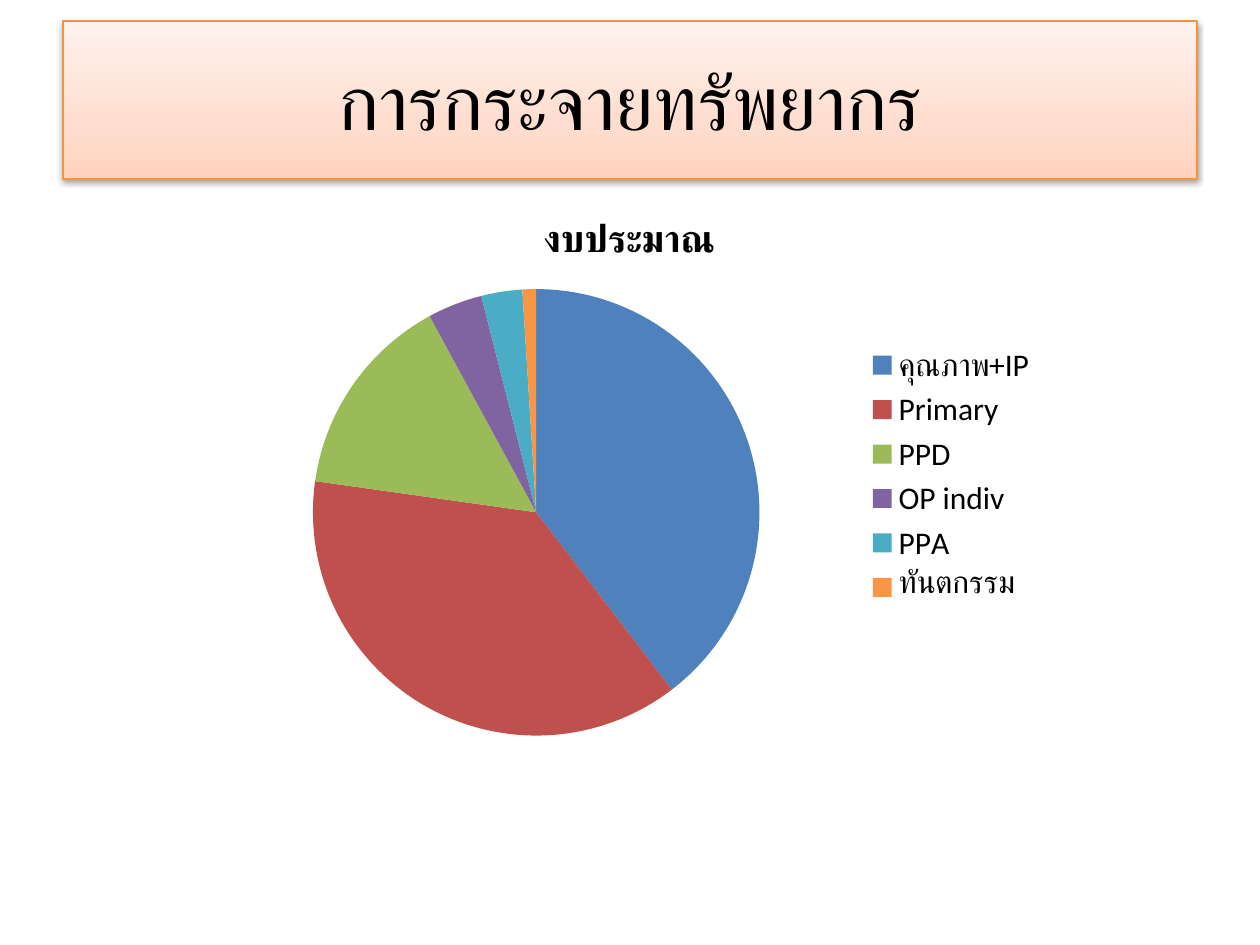
from lxml.etree import SubElement
from pptx import Presentation
from pptx.chart.data import CategoryChartData
from pptx.dml.color import RGBColor
from pptx.enum.chart import XL_CHART_TYPE, XL_LEGEND_POSITION
from pptx.enum.text import MSO_ANCHOR, PP_ALIGN
from pptx.oxml import parse_xml
from pptx.oxml.ns import nsdecls, qn
from pptx.util import Pt

PX = 914400 // 126
FONT = "Calibri"
COLORS = {
    "text": "000000", "line": "F69240", "shadow": "000000",
    "low": "FFD2BD", "mid": "FFDED0", "high": "FFF2ED",
}
STOPS = [(0, "low"), (35, "mid"), (100, "high")]
BUDGET = [
    ("คุณภาพ+IP", 40, "4F81BD"),
    ("Primary", 38, "C0504D"),
    ("PPD", 15, "9BBB59"),
    ("OP indiv", 4, "8064A2"),
    ("PPA", 3, "4BACC6"),
    ("ทันตกรรม", 1, "F79646"),
]


def scale(box):
    return [n * PX for n in box]


def style(font, size, bold=False):
    font.name = FONT
    font.size = Pt(size)
    font.bold = bold
    font.color.rgb = RGBColor.from_string(COLORS["text"])


def add_run(para, text, size, bold=False):
    run = para.add_run()
    run.text = text
    style(run.font, size, bold)


def shade(shape):
    """Give the shape a vertical gradient, a thin line and a soft shadow."""
    shape.fill.background()
    shape.line.color.rgb = RGBColor.from_string(COLORS["line"])
    shape.line.width = Pt(0.75)
    stops = "".join(
        f'<a:gs pos="{pos * 1000}"><a:srgbClr val="{COLORS[key]}"/></a:gs>'
        for pos, key in STOPS)
    props = shape.element.spPr
    props.replace(props.find(qn("a:noFill")), parse_xml(
        f'<a:gradFill {nsdecls("a")} rotWithShape="1"><a:gsLst>{stops}</a:gsLst>'
        '<a:lin ang="16200000" scaled="1"/></a:gradFill>'))
    shape.shadow.inherit = False
    cast = SubElement(props.find(qn("a:effectLst")), qn("a:outerShdw"),
                      blurRad=str(Pt(3.1)), dist=str(Pt(1.6)),
                      dir="5400000", rotWithShape="0")
    tint = SubElement(cast, qn("a:srgbClr"), val=COLORS["shadow"])
    SubElement(tint, qn("a:alpha"), val="38000")


def set_title(slide, box, text):
    title = slide.shapes.title
    title.left, title.top, title.width, title.height = scale(box)
    shade(title)
    frame = title.text_frame
    frame.word_wrap = True
    frame.vertical_anchor = MSO_ANCHOR.MIDDLE
    para = frame.paragraphs[0]
    para.alignment = PP_ALIGN.CENTER
    add_run(para, text, 44)


def add_pie(slide, box, name, rows):
    data = CategoryChartData()
    data.categories = [row[0] for row in rows]
    data.add_series(name, [row[1] for row in rows])
    chart = slide.shapes.add_chart(XL_CHART_TYPE.PIE, *scale(box), data).chart
    style(chart.font, 18)
    add_run(chart.chart_title.text_frame.paragraphs[0], name, 21.6, True)
    chart.chart_title.include_in_layout = False
    chart.has_legend = True
    chart.legend.position = XL_LEGEND_POSITION.RIGHT
    chart.legend.include_in_layout = False
    style(chart.legend.font, 18)
    plot = chart.plots[0]
    plot.vary_by_categories = True
    for i, row in enumerate(rows):
        fill = plot.series[0].points[i].format.fill
        fill.solid()
        fill.fore_color.rgb = RGBColor.from_string(row[2])


def main():
    deck = Presentation()
    deck.slide_width, deck.slide_height = scale((1260, 945))
    slide = deck.slides.add_slide(deck.slide_layouts[5])
    add_pie(slide, (210, 193, 840, 560), "งบประมาณ", BUDGET)
    set_title(slide, (63, 21, 1134, 158), "การกระจายทรัพยากร")
    deck.save("out.pptx")


if __name__ == "__main__":
    main()
